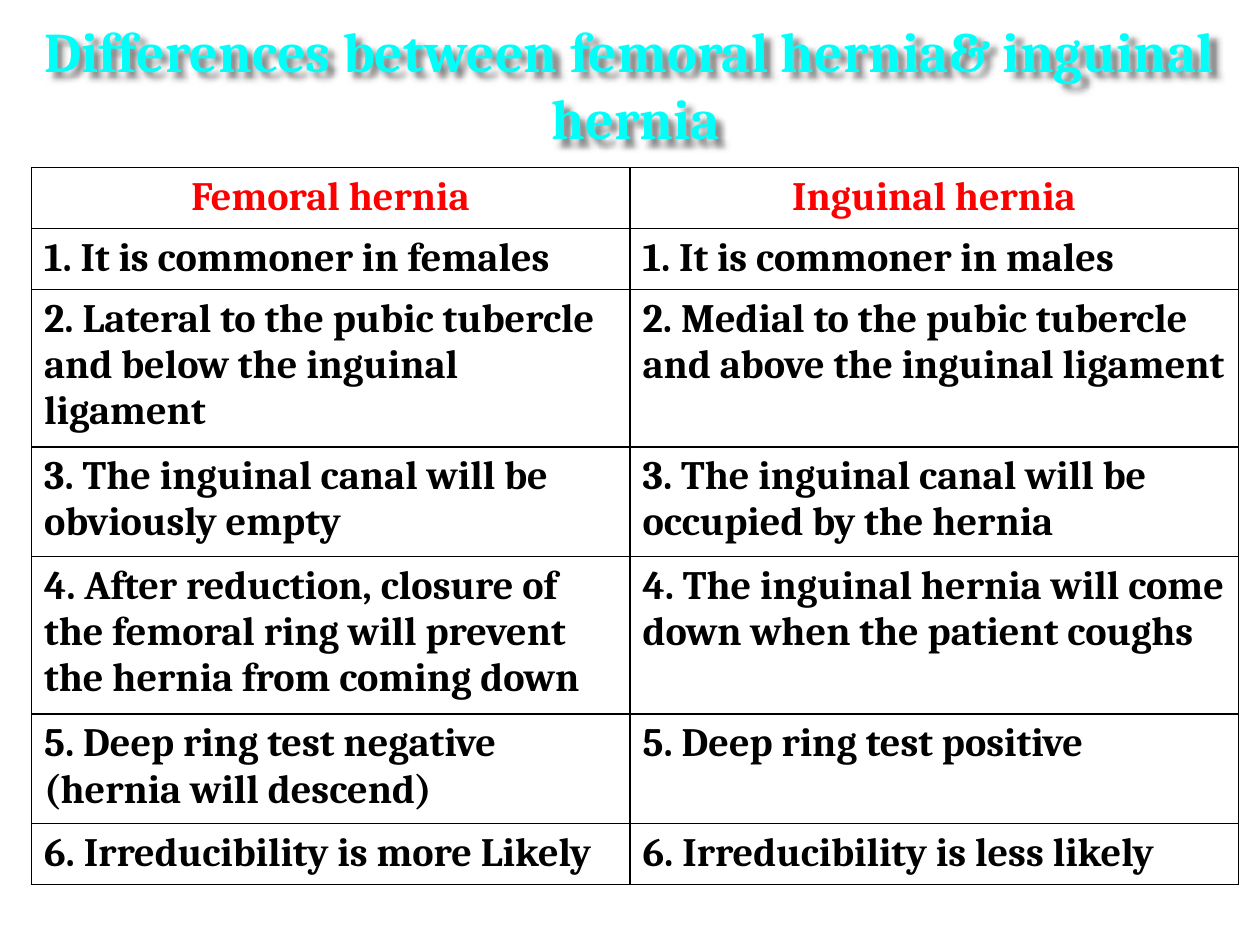
from lxml.etree import SubElement
from pptx import Presentation
from pptx.dml.color import RGBColor
from pptx.enum.text import MSO_ANCHOR, PP_ALIGN
from pptx.oxml.ns import qn
from pptx.util import Inches, Pt

FONT = "Cambria"
CYAN = RGBColor(0x01, 0xFF, 0xF9)
RED = RGBColor(0xFF, 0x00, 0x00)
BLACK = RGBColor(0x00, 0x00, 0x00)

TITLE_LINES = ["Differences between femoral hernia& inguinal", " hernia"]
HEADINGS = ("Femoral hernia", "Inguinal hernia")
DIFFERENCES = [
    ("It is commoner in females", "It is commoner in males"),
    ("Lateral to the pubic tubercle and below the inguinal ligament",
     "Medial to the pubic tubercle and above the inguinal ligament"),
    ("The inguinal canal will be obviously empty",
     "The inguinal canal will be occupied by the hernia"),
    ("After reduction, closure of the femoral ring will prevent the hernia from coming down",
     "The inguinal hernia will come down when the patient coughs"),
    ("Deep ring test negative (hernia will descend)", "Deep ring test positive"),
    ("Irreducibility is more Likely", "Irreducibility is less likely"),
]
COLUMN_WIDTHS = [4.75, 4.83]
ROW_HEIGHTS = [0.48, 0.48, 1.25, 0.87, 1.25, 0.87, 0.48]


def write_text(text_frame, lines, size, color, alignment=PP_ALIGN.LEFT):
    for index, line in enumerate(lines):
        paragraph = text_frame.paragraphs[0] if index == 0 else text_frame.add_paragraph()
        paragraph.alignment = alignment
        run = paragraph.add_run()
        run.text = line
        run.font.name = FONT
        run.font.size = Pt(size)
        run.font.bold = True
        run.font.color.rgb = color


def add_soft_shadow(shape):
    effects = SubElement(shape.element.spPr, qn("a:effectLst"))
    shadow = SubElement(effects, qn("a:outerShdw"), blurRad=str(Pt(4)),
                        dist=str(Pt(4)), dir="2700000", algn="tl", rotWithShape="0")
    color = SubElement(shadow, qn("a:srgbClr"), val=str(BLACK))
    SubElement(color, qn("a:alpha"), val="50000")


def add_title(slide):
    title = slide.shapes.add_textbox(Inches(0.08), Inches(0.08), Inches(9.84), Inches(1.17))
    title.text_frame.word_wrap = False
    title.text_frame.vertical_anchor = MSO_ANCHOR.MIDDLE
    write_text(title.text_frame, TITLE_LINES, size=32, color=CYAN, alignment=PP_ALIGN.CENTER)
    add_soft_shadow(title)


def set_borders(cell):
    properties = cell._tc.get_or_add_tcPr()
    for side in ("a:lnL", "a:lnR", "a:lnT", "a:lnB"):
        line = SubElement(properties, qn(side), w=str(Pt(1)))
        fill = SubElement(line, qn("a:solidFill"))
        SubElement(fill, qn("a:srgbClr"), val=str(BLACK))


def fill_cell(cell, text, color, alignment):
    set_borders(cell)
    cell.fill.background()
    write_text(cell.text_frame, [text], size=23, color=color, alignment=alignment)


def add_comparison_table(slide):
    frame = slide.shapes.add_table(
        len(ROW_HEIGHTS), len(COLUMN_WIDTHS), Inches(0.25), Inches(1.33),
        Inches(sum(COLUMN_WIDTHS)), Inches(sum(ROW_HEIGHTS)))
    table = frame.table
    table.first_row = False
    table.horz_banding = False
    for column, width in zip(table.columns, COLUMN_WIDTHS):
        column.width = Inches(width)
    for row, height in zip(table.rows, ROW_HEIGHTS):
        row.height = Inches(height)
    for cell, heading in zip(table.rows[0].cells, HEADINGS):
        fill_cell(cell, heading, RED, PP_ALIGN.CENTER)
    for number, texts in enumerate(DIFFERENCES, start=1):
        for cell, text in zip(table.rows[number].cells, texts):
            fill_cell(cell, f"{number}. {text}", BLACK, PP_ALIGN.LEFT)


def main():
    presentation = Presentation()
    presentation.slide_width = Inches(10)
    presentation.slide_height = Inches(7.5)
    slide = presentation.slides.add_slide(presentation.slide_layouts[6])
    add_title(slide)
    add_comparison_table(slide)
    presentation.save("out.pptx")


if __name__ == "__main__":
    main()
